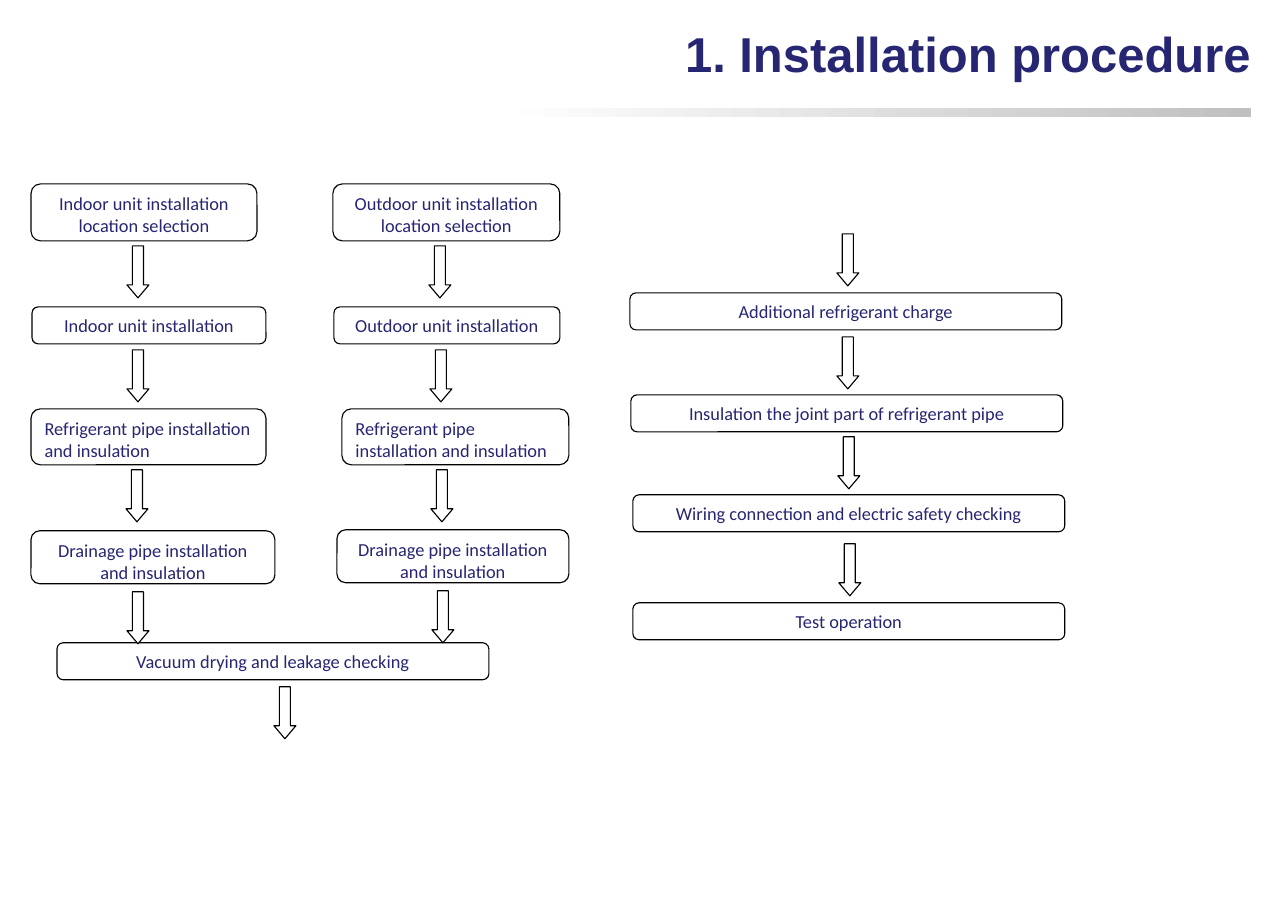
from pptx import Presentation
from pptx import util as u
from pptx.dml.color import RGBColor
from pptx.enum import shapes, text

# Content: steps are (text, left, top, width, height) in px
TITLE = "1. Installation procedure"
PIPE = "Refrigerant pipe installation and insulation"
DRAINAGE = "Drainage pipe installation and insulation"
INDOOR_STEPS = [
    ("Indoor unit installation location selection", 31, 184, 226, 57),
    ("Indoor unit installation", 32, 307, 234, 37),
    (PIPE, 31, 409, 235, 56),
    (DRAINAGE, 31, 531, 244, 53),
]
OUTDOOR_STEPS = [
    ("Outdoor unit installation location selection", 333, 184, 227, 57),
    ("Outdoor unit installation", 334, 307, 226, 37),
    (PIPE, 342, 409, 227, 56),
    (DRAINAGE, 337, 530, 232, 53),
]
# Wide steps share one size: (text, left, top)
WIDE_SIZE = (432, 37)
WIDE_STEPS = [
    ("Vacuum drying and leakage checking", 57, 643),
    ("Additional refrigerant charge", 630, 293),
    ("Insulation the joint part of refrigerant pipe", 631, 395),
    ("Wiring connection and electric safety checking", 633, 495),
    ("Test operation", 633, 603),
]
# Arrows share one size: (left, top)
ARROW_SIZE = (22, 52)
ARROWS = [
    (127, 246), (127, 350), (126, 470), (127, 592),
    (429, 246), (430, 350), (431, 470), (432, 591),
    (274, 687),
    (837, 234), (837, 337), (838, 437), (839, 544),
]

NAVY = RGBColor(0x26, 0x26, 0x73)
BLACK = RGBColor(0, 0, 0)
WHITE = RGBColor(0xFF, 0xFF, 0xFF)
SILVER = RGBColor(0xC0, 0xC0, 0xC0)
PX_PER_INCH = 110.2


def px(length):
    return u.Inches(length / PX_PER_INCH)


def add_outlined(slide, kind, left, top, width, height):
    shape = slide.shapes.add_shape(kind, *map(px, (left, top, width, height)))
    shape.shadow.inherit = False
    shape.fill.solid()
    shape.fill.fore_color.rgb = WHITE
    shape.line.color.rgb = BLACK
    shape.line.width = u.Pt(0.75)
    return shape


def format_text(paragraph, name, size, align, bold=False):
    paragraph.alignment = align
    font = paragraph.runs[0].font
    font.name, font.size, font.bold = name, u.Pt(size), bold
    font.color.rgb = NAVY


def add_title(slide):
    title = slide.shapes.title
    title.left, title.top, title.width, title.height = map(px, (670, 46, 593, 44))
    frame = title.text_frame
    frame.text = TITLE
    frame.word_wrap = False
    frame.auto_size = text.MSO_AUTO_SIZE.NONE
    frame.vertical_anchor = text.MSO_ANCHOR.MIDDLE
    paragraph = frame.paragraphs[0]
    paragraph.line_spacing = u.Pt(19)
    format_text(paragraph, "Arial", 32, text.PP_ALIGN.RIGHT, bold=True)


def add_title_rule(slide):
    rule = slide.shapes.add_shape(
        shapes.MSO_SHAPE.RECTANGLE, *map(px, (497, 108, 754, 9)))
    rule.shadow.inherit = False
    rule.line.fill.background()
    rule.fill.gradient()
    rule.fill.gradient_angle = 0
    for stop, color in zip(rule.fill.gradient_stops, (WHITE, SILVER)):
        stop.color.rgb = color


def add_step(slide, label, *box):
    shape = add_outlined(slide, shapes.MSO_SHAPE.ROUNDED_RECTANGLE, *box)
    frame = shape.text_frame
    frame.text = label
    frame.word_wrap = True
    frame.vertical_anchor = text.MSO_ANCHOR.TOP
    align = text.PP_ALIGN.LEFT if label == PIPE else text.PP_ALIGN.CENTER
    format_text(frame.paragraphs[0], "Calibri", 12, align)


def add_arrow(slide, left, top):
    arrow = add_outlined(slide, shapes.MSO_SHAPE.DOWN_ARROW, left, top, *ARROW_SIZE)
    arrow.adjustments[0] = 0.5
    arrow.adjustments[1] = 0.59


def main():
    presentation = Presentation()
    presentation.slide_width, presentation.slide_height = u.Inches(11.69), u.Inches(8.27)
    slide = presentation.slides.add_slide(presentation.slide_layouts[5])

    # Heading
    add_title_rule(slide)
    add_title(slide)

    # Flow chart
    wide_steps = [step + WIDE_SIZE for step in WIDE_STEPS]
    for step in INDOOR_STEPS + OUTDOOR_STEPS + wide_steps:
        add_step(slide, *step)
    for position in ARROWS:
        add_arrow(slide, *position)

    presentation.save("out.pptx")


if __name__ == "__main__":
    main()
